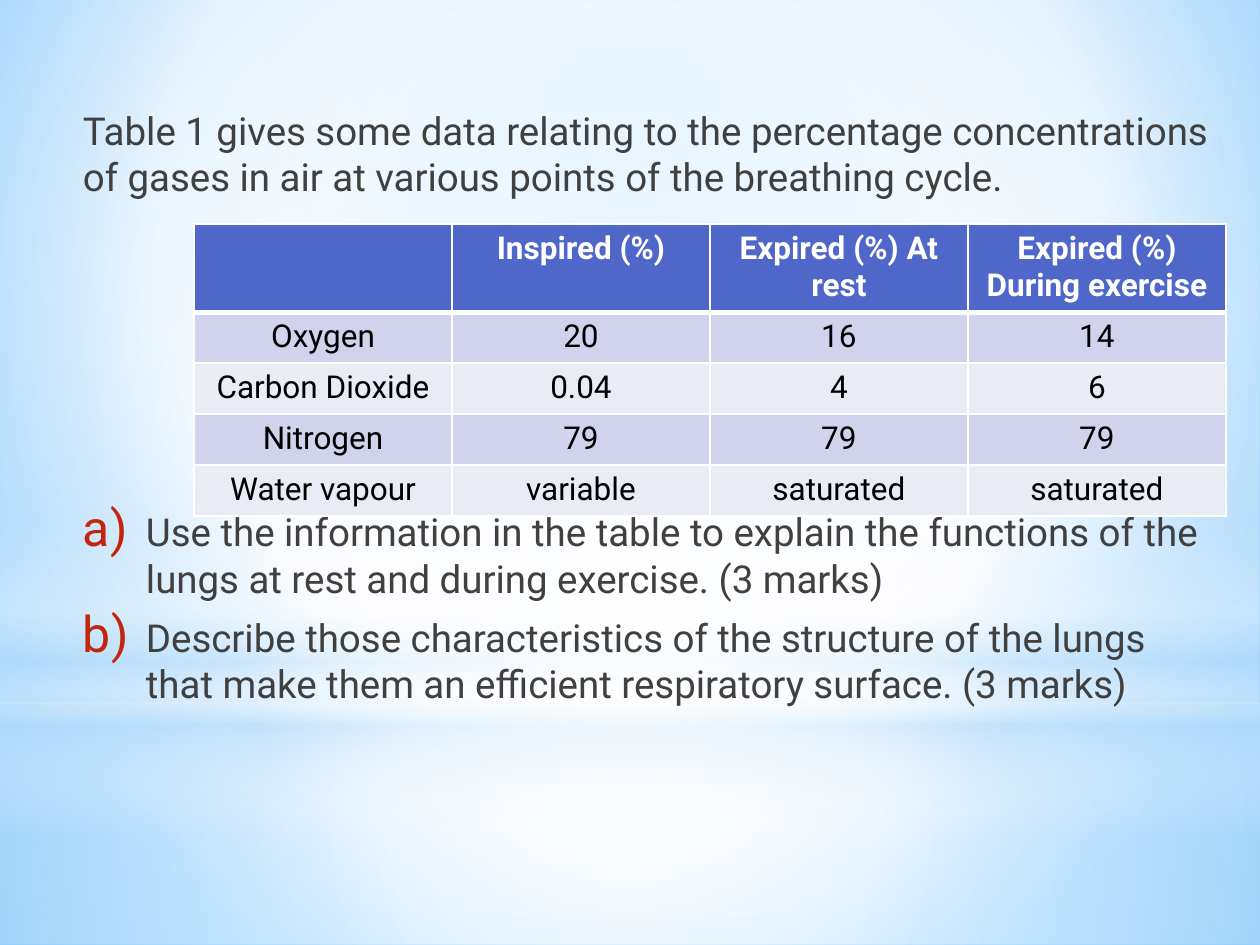
from lxml import etree
from pptx import Presentation, util as u
from pptx.dml.color import RGBColor
from pptx.enum import shapes, text
from pptx.oxml import parse_xml
from pptx.oxml.ns import nsdecls, qn

deck = Presentation()
deck.slide_width, deck.slide_height = W, H = u.Inches(10), u.Inches(7.5)
slide = deck.slides.add_slide(deck.slide_layouts[6])
rgb = RGBColor.from_string


def gradient(parent, stops, focus):
    marks = "".join(
        f'<a:gs pos="{at * 1000}"><a:srgbClr val="{color}"><a:alpha val="{alpha * 1000}"/></a:srgbClr></a:gs>'
        for at, color, alpha in stops)
    if focus:
        l, t, r, b = [side * 1000 for side in focus]
        direction = f'<a:path path="circle"><a:fillToRect l="{l}" t="{t}" r="{r}" b="{b}"/></a:path>'
    else:
        direction = '<a:lin ang="5400000" scaled="0"/>'
    solid = parent.find(qn("a:solidFill"))
    solid.getparent().replace(solid, parse_xml(
        f'<a:gradFill {nsdecls("a")} rotWithShape="1"><a:gsLst>{marks}</a:gsLst>{direction}</a:gradFill>'))


slide.background.fill.solid()
slide.background.fill.fore_color.rgb = rgb("FFFFFF")
gradient(slide.element.find(".//" + qn("p:bgPr")),
         [(0, "9ED5FF", 100), (60, "FFFFFF", 100), (100, "5BB9FF", 100)], (20, 10, 20, 60))

center = (50, 50, 50, 50)
box, oval = shapes.MSO_SHAPE.RECTANGLE, shapes.MSO_SHAPE.OVAL
glows = [
    (box, 0.744, 0.256, center, [(0, "FFFFFF", 91), (37, "FFFFFF", 76), (100, "B4DCFA", 79)]),
    (box, 0, 0.744, center, [(0, "FFFFFF", 89), (48, "FFFFFF", 62), (100, "B4DCFA", 79)]),
    (box, 0.55, 0.333, None, [(0, "FFFFFF", 0), (29, "FFFFFF", 30), (45, "B4DCFA", 40),
                              (55, "FFFFFF", 26), (65, "B4DCFA", 60), (100, "FFFFFF", 0)]),
    (oval, 0.233, 0.744, center, [(0, "FFFFFF", 100), (56, "FFFFFF", 0)]),
]
for kind, top, height, focus, stops in glows:
    glow = slide.shapes.add_shape(kind, 0, int(H * top), W, int(H * height))
    glow.shadow.inherit = False
    glow.line.fill.background()
    glow.fill.solid()
    gradient(glow.element.spPr, stops, focus)

body = slide.shapes.add_textbox(int(W * 0.051), int(H * 0.107), int(W * 0.921), int(H * 0.835)).text_frame
body.word_wrap = True
passages = [
    ("Table 1 gives some data relating to the percentage concentrations of gases in air "
     "at various points of the breathing cycle.", 4.4, 0.05, 0),
    ("Use the information in the table to explain the functions of the lungs at rest "
     "and during exercise. (3 marks)", 173.4, 0.55, -0.5),
    ("Describe those characteristics of the structure of the lungs that make them "
     "an efficient respiratory surface. (3 marks)", 4.4, 0.55, -0.5),
]
for i, (words, before, margin, indent) in enumerate(passages):
    passage = body.paragraphs[0] if i == 0 else body.add_paragraph()
    passage.text = words
    passage.space_before, passage.space_after = u.Pt(before), u.Pt(3)
    layout = passage._p.get_or_add_pPr()
    layout.set("marL", str(u.Inches(margin)))
    layout.set("indent", str(u.Inches(indent)))
    if indent:
        color = etree.SubElement(layout, qn("a:buClr"))
        etree.SubElement(color, qn("a:srgbClr"), val="C3260C")
        etree.SubElement(layout, qn("a:buSzPct"), val="130000")
        etree.SubElement(layout, qn("a:buFont"), typeface="Roboto")
        etree.SubElement(layout, qn("a:buAutoNum"), type="alphaLcParenR")
    passage.font.name, passage.font.size = "Roboto", u.Pt(22)
    passage.font.color.rgb = rgb("404040")

gases = [
    ("", "Inspired (%)", "Expired (%) At rest", "Expired (%) During exercise"),
    ("Oxygen", "20", "16", "14"),
    ("Carbon Dioxide", "0.04", "4", "6"),
    ("Nitrogen", "79", "79", "79"),
    ("Water vapour", "variable", "saturated", "saturated"),
]
table = slide.shapes.add_table(5, 4, int(W * 0.154), int(H * 0.237), int(W * 0.819), int(H * 0.309)).table
for r, entries in enumerate(gases):
    table.rows[r].height = int(H * (0.054 if r else 0.091))
    for c, entry in enumerate(entries):
        cell = table.cell(r, c)
        cell.fill.solid()
        cell.fill.fore_color.rgb = rgb("4E67C8" if r == 0 else "D0D3EB" if r % 2 else "E9EBF5")
        widths = {"L": 1, "R": 1, "T": 3 if r == 1 else 1, "B": 1 if r else 3}
        for i, (side, width) in enumerate(widths.items()):
            cell._tc.tcPr.insert(i, parse_xml(
                f'<a:ln{side} {nsdecls("a")} w="{u.Pt(width)}"><a:solidFill>'
                f'<a:srgbClr val="FFFFFF"/></a:solidFill></a:ln{side}>'))
        label = cell.text_frame.paragraphs[0]
        label.text = entry
        label.alignment = text.PP_ALIGN.CENTER
        label.font.name, label.font.size, label.font.bold = "Roboto", u.Pt(18), r == 0
        label.font.color.rgb = rgb("000000" if r else "FFFFFF")

deck.save("out.pptx")
